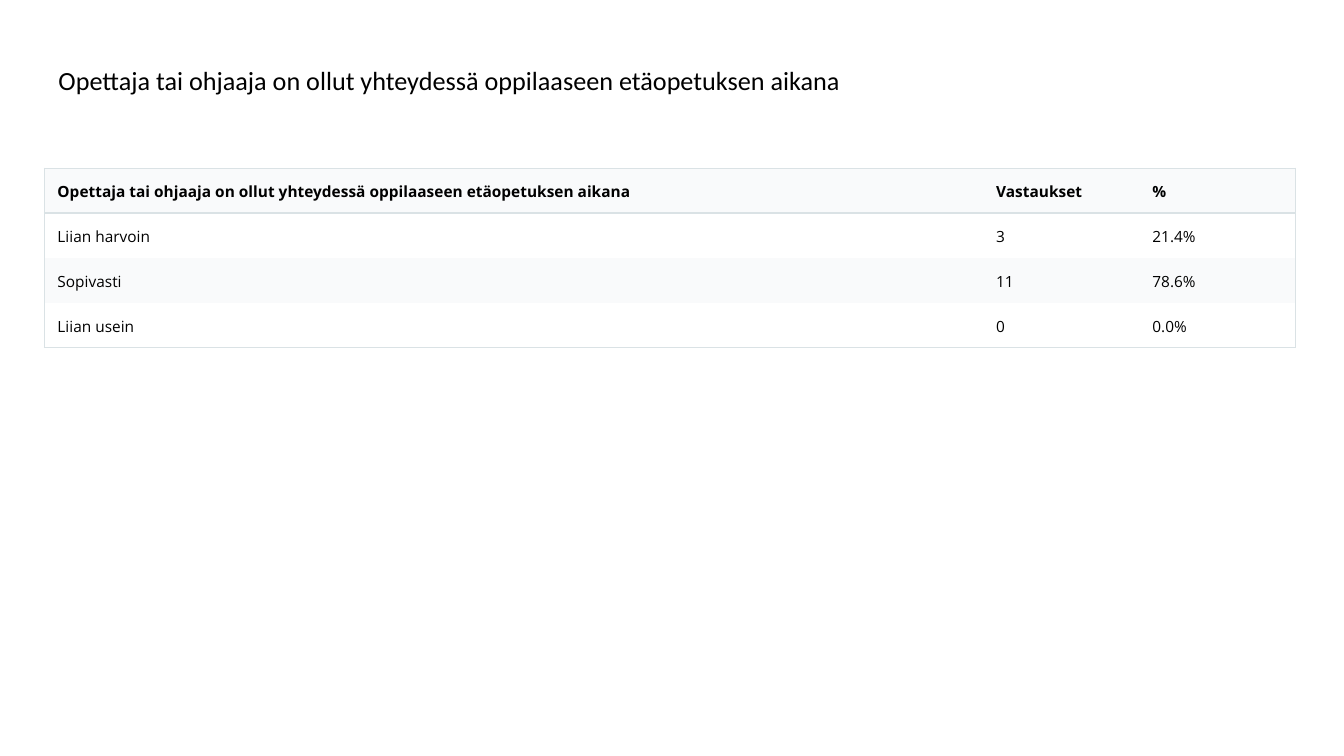
"""Build a slide with a survey question and a table of its answers."""
from dataclasses import dataclass

from lxml.etree import SubElement
from pptx import Presentation
from pptx.dml.color import RGBColor as RGB
from pptx.enum.text import MSO_ANCHOR as Anchor
from pptx.oxml.ns import qn
from pptx.util import Inches, Pt

QUESTION = "Opettaja tai ohjaaja on ollut yhteydessä oppilaaseen etäopetuksen aikana"
ROWS = [
    (QUESTION, "Vastaukset", "%"),
    ("Liian harvoin", "3", "21.4%"),
    ("Sopivasti", "11", "78.6%"),
    ("Liian usein", "0", "0.0%"),
]
COL_WIDTHS = (9.31, 1.55, 1.55)
ROW_HEIGHT = 0.44
TITLE_BOX = (0.45, 0.39, 12.42, 0.84)
TABLE_AT = (0.44, 1.67)
MARGIN = 0.13


@dataclass(frozen=True)
class Theme:
    text: str = "000000"
    border: str = "DAE2E5"
    bands: tuple = ("F9FAFB", "FFFFFF")
    title_font: str = "Calibri"
    table_font: str = "Open Sans"
    title_size: float = 18.7
    table_size: float = 11
    border_width: float = 1


THEME = Theme()


def set_font(p, name, size, bold=False):
    p.font.name, p.font.size, p.font.bold = name, Pt(size), bold
    p.font.color.rgb = RGB.from_string(THEME.text)


def set_margins(box):
    box.margin_left = box.margin_right = Inches(MARGIN)
    box.margin_top = box.margin_bottom = Inches(MARGIN)


def set_borders(cell, sides):
    tc_pr = cell._tc.get_or_add_tcPr()
    for side in "LRTB":
        ln = SubElement(tc_pr, qn(f"a:ln{side}"), w=str(Pt(THEME.border_width)))
        if side in sides:
            fill = SubElement(ln, qn("a:solidFill"))
            SubElement(fill, qn("a:srgbClr"), val=THEME.border)
        else:
            SubElement(ln, qn("a:noFill"))


def add_title(slide):
    tf = slide.shapes.add_textbox(*map(Inches, TITLE_BOX)).text_frame
    tf.word_wrap = True
    tf.vertical_anchor = Anchor.MIDDLE
    set_margins(tf)
    p = tf.paragraphs[0]
    p.text = QUESTION
    p.line_spacing = 0.9
    set_font(p, THEME.title_font, THEME.title_size)


def add_answers(slide):
    n_rows, n_cols = len(ROWS), len(COL_WIDTHS)
    size = (sum(COL_WIDTHS), n_rows * ROW_HEIGHT)
    table = slide.shapes.add_table(n_rows, n_cols, *map(Inches, TABLE_AT + size)).table
    for column, width in zip(table.columns, COL_WIDTHS):
        column.width = Inches(width)
    for i, row in enumerate(ROWS):
        table.rows[i].height = Inches(ROW_HEIGHT)
        for j, text in enumerate(row):
            cell = table.cell(i, j)
            edges = {"L": j == 0, "R": j == n_cols - 1,
                     "T": i <= 1, "B": i in (0, n_rows - 1)}
            set_borders(cell, [side for side, shown in edges.items() if shown])
            cell.fill.solid()
            cell.fill.fore_color.rgb = RGB.from_string(THEME.bands[i % 2])
            set_margins(cell)
            p = cell.text_frame.paragraphs[0]
            p.text = text
            set_font(p, THEME.table_font, THEME.table_size, bold=i == 0)


def main():
    prs = Presentation()
    prs.slide_width, prs.slide_height = Inches(13.33), Inches(7.5)
    slide = prs.slides.add_slide(prs.slide_layouts[6])
    add_title(slide)
    add_answers(slide)
    prs.save("out.pptx")


if __name__ == "__main__":
    main()
